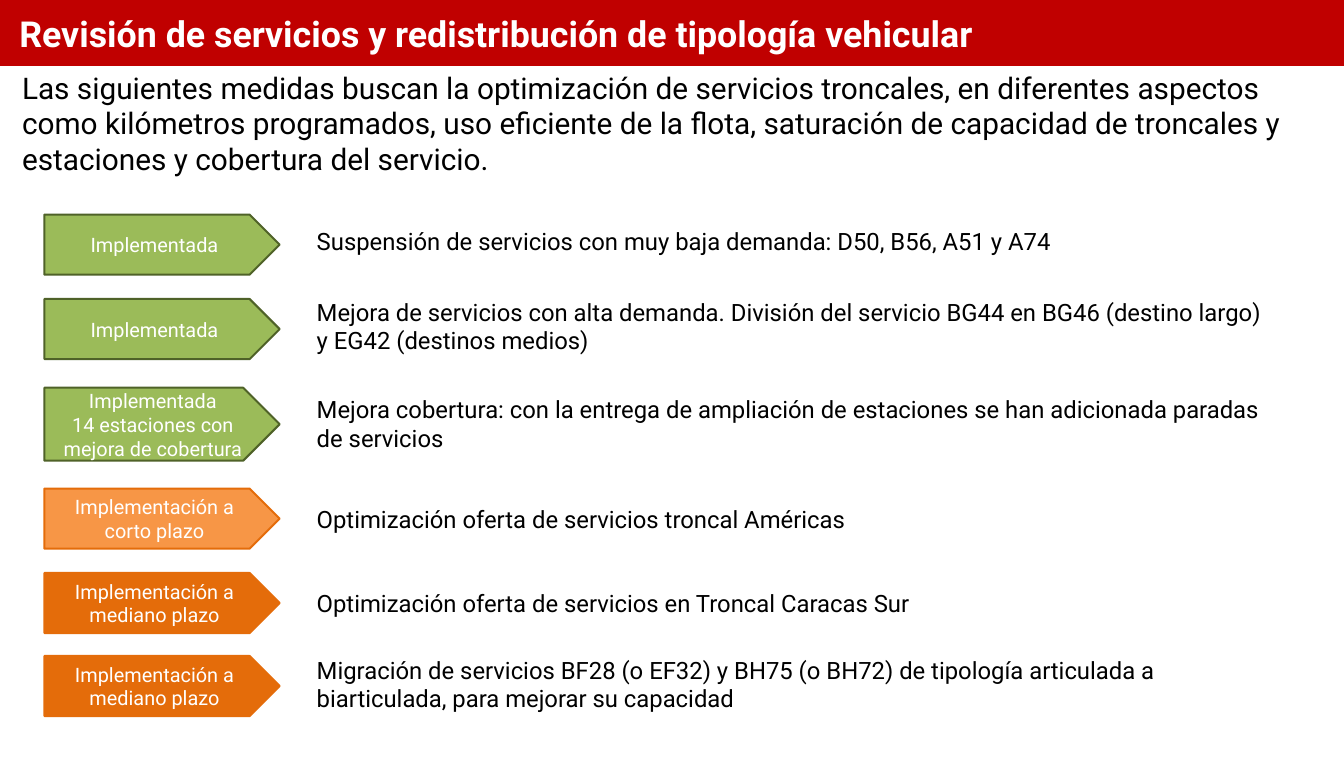
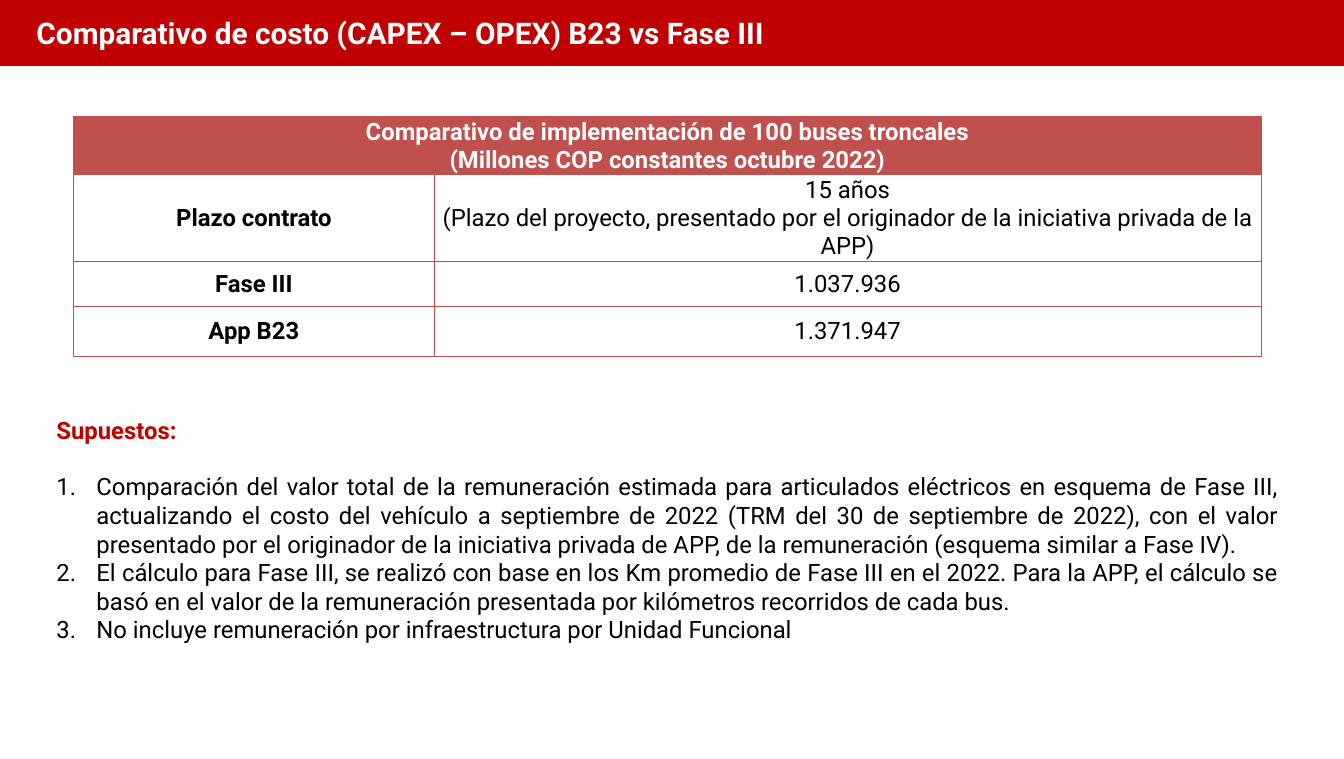
from pptx import Presentation
from pptx.util import Inches, Pt
from pptx.dml.color import RGBColor
from pptx.enum.shapes import MSO_SHAPE
from pptx.enum.text import PP_ALIGN, MSO_ANCHOR
from pptx.oxml import parse_xml
from pptx.oxml.ns import nsdecls

COLORS = {
    "red": "C00000", "white": "FFFFFF", "black": "000000",
    "green": "9BBB59", "olive": "4F6228", "peach": "F79646",
    "orange": "E46C0A", "brick": "C0504D",
}
FONT = "Roboto"


def color(name):
    return RGBColor.from_string(COLORS[name])


def write(frame, lines, size, tint="black", bold=False,
          align=PP_ALIGN.LEFT, anchor=MSO_ANCHOR.TOP):
    frame.word_wrap = True
    frame.vertical_anchor = anchor
    for i, line in enumerate(lines):
        para = frame.paragraphs[0] if i == 0 else frame.add_paragraph()
        para.alignment = align
        run = para.add_run()
        run.text = line
        run.font.name = FONT
        run.font.size = Pt(size)
        run.font.bold = bold
        run.font.color.rgb = color(tint)


deck = Presentation()
deck.slide_width, deck.slide_height = Inches(18.79), Inches(10.61)
layout = deck.slide_layouts[5]

titles = [
    ("Revisión de servicios y redistribución de tipología vehicular",
     36, (0.17, 0.11, 16.36, 0.71)),
    ("Comparativo de costo (CAPEX – OPEX) B23 vs Fase III",
     30, (0.41, 0.15, 16.45, 0.61)),
]
slides = []
for text, size, box in titles:
    slide = deck.slides.add_slide(layout)
    title = slide.shapes.title
    title.left, title.top, title.width, title.height = map(Inches, box)
    write(title.text_frame, [text], size, "white", True)
    slides.append(slide)
plan, cost = slides

band = plan.shapes.add_shape(MSO_SHAPE.RECTANGLE, 0, 0, deck.slide_width, Inches(0.92))
band.shadow.inherit = False
band.fill.solid()
band.fill.fore_color.rgb = color("red")
band.line.fill.background()
band._element.nvSpPr.cNvPr.set("id", "20")
layout.shapes._spTree.insert(2, band._element)

intro = plan.shapes.add_textbox(Inches(0.21), Inches(0.92), Inches(18.46), Inches(1.6))
write(intro.text_frame, [
    "Las siguientes medidas buscan la optimización de servicios troncales, en diferentes "
    "aspectos como kilómetros programados, uso eficiente de la flota, saturación de "
    "capacidad de troncales y estaciones y cobertura del servicio."], 30)

done = ("green", "olive")
soon = ("peach", "orange")
later = ("orange", "orange")
steps = [
    (3, 0.84, done, ["Implementada"], 3.12, 0.5,
     "Suspensión de servicios con muy baja demanda: D50, B56, A51 y A74"),
    (4.18, 0.84, done, ["Implementada"], 4.11, 0.91,
     "Mejora de servicios con alta demanda. División del servicio BG44 en BG46 "
     "(destino largo) y EG42 (destinos medios)"),
    (5.42, 1.02, done, ["Implementada", "14 estaciones con mejora de cobertura"], 5.47, 0.91,
     "Mejora cobertura: con la entrega de ampliación de estaciones se han adicionada "
     "paradas de servicios"),
    (6.83, 0.84, soon, ["Implementación a corto plazo"], 7, 0.5,
     "Optimización oferta de servicios troncal Américas"),
    (8.01, 0.84, later, ["Implementación a mediano plazo"], 8.18, 0.5,
     "Optimización oferta de servicios en Troncal Caracas Sur"),
    (9.17, 0.84, later, ["Implementación a mediano plazo"], 9.11, 0.91,
     "Migración de servicios BF28 (o EF32) y BH75 (o BH72) de tipología articulada a "
     "biarticulada, para mejorar su capacidad"),
]
for top, high, (fill, edge), status, note_top, note_high, note in steps:
    arrow = plan.shapes.add_shape(MSO_SHAPE.PENTAGON, Inches(0.62), Inches(top),
                                  Inches(3.29), Inches(high))
    arrow.shadow.inherit = False
    arrow.fill.solid()
    arrow.fill.fore_color.rgb = color(fill)
    arrow.line.color.rgb = color(edge)
    arrow.line.width = Pt(2)
    write(arrow.text_frame, status, 20, "white", False, PP_ALIGN.CENTER, MSO_ANCHOR.MIDDLE)
    label = plan.shapes.add_textbox(Inches(4.33), Inches(note_top),
                                    Inches(13.43), Inches(note_high))
    write(label.text_frame, [note], 24)

rows = [
    [["Comparativo de implementación de 100 buses troncales",
      "(Millones COP constantes octubre 2022)"], []],
    [["Plazo contrato"],
     ["15 años", "(Plazo del proyecto, presentado por el originador de la "
      "iniciativa privada de la APP)"]],
    [["Fase III"], ["1.037.936"]],
    [["App B23"], ["1.371.947"]],
]
table = cost.shapes.add_table(4, 2, Inches(1.03), Inches(1.63),
                              Inches(16.6), Inches(3.35)).table
table.first_row = table.horz_banding = False
for col, width in zip(table.columns, (5.04, 11.56)):
    col.width = Inches(width)
for row, high in zip(table.rows, (0.81, 1.21, 0.63, 0.7)):
    row.height = Inches(high)
table.cell(0, 0).merge(table.cell(0, 1))
for r, row in enumerate(rows):
    for c, lines in enumerate(row):
        cell = table.cell(r, c)
        cell.margin_left = cell.margin_right = cell.margin_top = Inches(0.01)
        cell.margin_bottom = 0
        for side in ("lnL", "lnR", "lnT", "lnB"):
            cell._tc.get_or_add_tcPr().append(parse_xml(
                f'<a:{side} {nsdecls("a")} w="12700"><a:solidFill>'
                f'<a:srgbClr val="{COLORS["brick"]}"/></a:solidFill></a:{side}>'))
        if r == 0:
            cell.fill.solid()
            cell.fill.fore_color.rgb = color("brick")
        else:
            cell.fill.background()
        write(cell.text_frame, lines, 24, "black" if r else "white", c == 0,
              PP_ALIGN.CENTER)
        cell.vertical_anchor = MSO_ANCHOR.MIDDLE

notes = cost.shapes.add_textbox(Inches(0.69), Inches(5.76), Inches(17.28), Inches(3.33))
frame = notes.text_frame
write(frame, [
    "Supuestos:",
    "Comparación del valor total de la remuneración estimada para articulados eléctricos en "
    "esquema de Fase III, actualizando el costo del vehículo a septiembre de 2022 (TRM del 30 "
    "de septiembre de 2022), con el valor presentado por el originador de la iniciativa "
    "privada de APP, de la remuneración (esquema similar a Fase IV).",
    "El cálculo para Fase III, se realizó con base en los Km promedio de Fase III en el 2022. "
    "Para la APP, el cálculo se basó en el valor de la remuneración presentada por kilómetros "
    "recorridos de cada bus.",
    "No incluye remuneración por infraestructura por Unidad Funcional",
], 24, align=PP_ALIGN.JUSTIFY)
head, *items = frame.paragraphs
head.runs[0].font.bold = True
head.runs[0].font.color.rgb = color("red")
for item in items:
    props = item._p.get_or_add_pPr()
    props.set("marL", str(Inches(0.56)))
    props.set("indent", str(-Inches(0.56)))
    props.append(parse_xml(f'<a:buFont {nsdecls("a")} typeface="+mj-lt"/>'))
    props.append(parse_xml(f'<a:buAutoNum {nsdecls("a")} type="arabicPeriod"/>'))
items[0].space_before = Pt(28)

deck.save("out.pptx")
